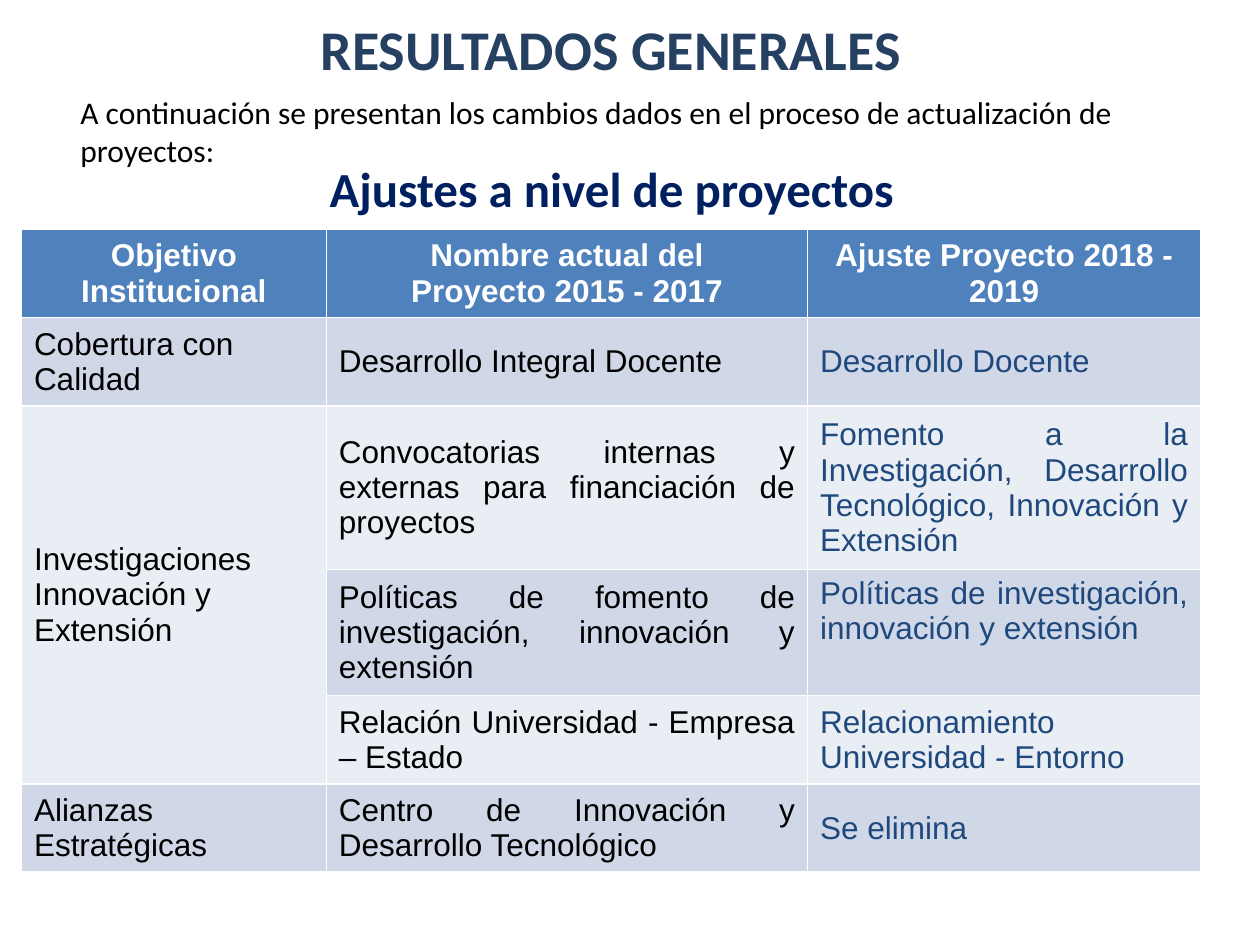
"""Builds the slide on project adjustments."""
from dataclasses import dataclass

from pptx import Presentation
from pptx.dml.color import RGBColor
from pptx.enum.text import MSO_ANCHOR, PP_ALIGN
from pptx.util import Inches, Pt


@dataclass(frozen=True)
class Theme:
    heading_font: str = "Calibri"
    table_font: str = "Arial"
    title_size: int = 32
    subtitle_size: int = 28
    body_size: int = 18
    title: str = "254061"
    subtitle: str = "002060"
    text: str = "000000"
    adjusted: str = "1F497D"
    header_text: str = "FFFFFF"
    header_fill: str = "4F81BD"
    bands: tuple = ("D0D8E8", "E9EDF4")


class SlideBuilder:
    def __init__(self, slide, theme):
        self.slide = slide
        self.theme = theme

    def fill_frame(self, frame, text, font, size, color, bold=False,
                   align=PP_ALIGN.LEFT, anchor=MSO_ANCHOR.MIDDLE):
        frame.text = text
        frame.word_wrap = True
        frame.vertical_anchor = anchor
        for paragraph in frame.paragraphs:
            paragraph.alignment = align
            paragraph.font.name = font
            paragraph.font.size = Pt(size)
            paragraph.font.bold = bold
            paragraph.font.color.rgb = RGBColor.from_string(color)

    def title(self, text, left, top, width, height):
        box = self.slide.shapes.title
        box.left, box.top = Inches(left), Inches(top)
        box.width, box.height = Inches(width), Inches(height)
        self.fill_frame(box.text_frame, text, self.theme.heading_font,
                        self.theme.title_size, self.theme.title, True, PP_ALIGN.CENTER)

    def text(self, text, left, top, width, height, size, color, **style):
        box = self.slide.shapes.add_textbox(
            Inches(left), Inches(top), Inches(width), Inches(height))
        self.fill_frame(box.text_frame, text, self.theme.heading_font, size, color, **style)

    def cell(self, cell, text, fill, color, anchor=MSO_ANCHOR.MIDDLE, **style):
        cell.fill.solid()
        cell.fill.fore_color.rgb = RGBColor.from_string(fill)
        self.fill_frame(cell.text_frame, text, self.theme.table_font,
                        self.theme.body_size, color, **style)
        cell.vertical_anchor = anchor

    def table(self, rows, left, top, widths, heights, merged, top_cells):
        theme = self.theme
        table = self.slide.shapes.add_table(
            len(rows), len(widths), Inches(left), Inches(top),
            Inches(sum(widths)), Inches(sum(heights))).table
        for column, width in zip(table.columns, widths):
            column.width = Inches(width)
        for row, height in zip(table.rows, heights):
            row.height = Inches(height)
        first, last = merged
        table.cell(*first).merge(table.cell(*last))
        colors = (theme.text, theme.text, theme.adjusted)
        aligns = (PP_ALIGN.LEFT, PP_ALIGN.JUSTIFY, PP_ALIGN.JUSTIFY)
        for r, texts in enumerate(rows):
            for c, text in enumerate(texts):
                cell = table.cell(r, c)
                if cell.is_spanned:
                    continue
                if r == 0:
                    self.cell(cell, text, theme.header_fill, theme.header_text,
                              bold=True, align=PP_ALIGN.CENTER)
                else:
                    anchor = MSO_ANCHOR.TOP if (r, c) in top_cells else MSO_ANCHOR.MIDDLE
                    self.cell(cell, text, theme.bands[(r - 1) % 2], colors[c],
                              anchor, align=aligns[c])


ROWS = [
    ("Objetivo Institucional", "Nombre actual del\nProyecto 2015 - 2017",
     "Ajuste Proyecto 2018 - 2019"),
    ("Cobertura con Calidad", "Desarrollo Integral Docente", "Desarrollo Docente"),
    ("Investigaciones Innovación y Extensión",
     "Convocatorias internas y externas para financiación de proyectos",
     "Fomento a la Investigación, Desarrollo Tecnológico, Innovación y Extensión"),
    ("", "Políticas de fomento de investigación, innovación y extensión",
     "Políticas de investigación, innovación y extensión"),
    ("", "Relación Universidad - Empresa – Estado",
     "Relacionamiento Universidad - Entorno"),
    ("Alianzas Estratégicas", "Centro de Innovación y Desarrollo Tecnológico",
     "Se elimina"),
]


def main():
    deck = Presentation()
    deck.slide_width, deck.slide_height = Inches(10), Inches(7.5)
    theme = Theme()
    page = SlideBuilder(deck.slides.add_slide(deck.slide_layouts[5]), theme)
    page.title("RESULTADOS GENERALES", 0.35, 0, 9, 0.76)
    page.text("A continuación se presentan los cambios dados en el proceso de "
              "actualización de proyectos:", 0.54, 0.38, 9.46, 1.01,
              theme.body_size, theme.text, anchor=MSO_ANCHOR.BOTTOM)
    page.table(ROWS, 0.17, 1.82, (2.42, 3.82, 3.12),
               (0.7, 0.7, 1.3, 1, 0.7, 0.7),
               merged=((2, 0), (4, 0)), top_cells={(3, 2)})
    page.text("Ajustes a nivel de proyectos", 0.97, 1.21, 7.77, 0.57,
              theme.subtitle_size, theme.subtitle, bold=True,
              align=PP_ALIGN.CENTER, anchor=MSO_ANCHOR.TOP)
    deck.save("out.pptx")


if __name__ == "__main__":
    main()
